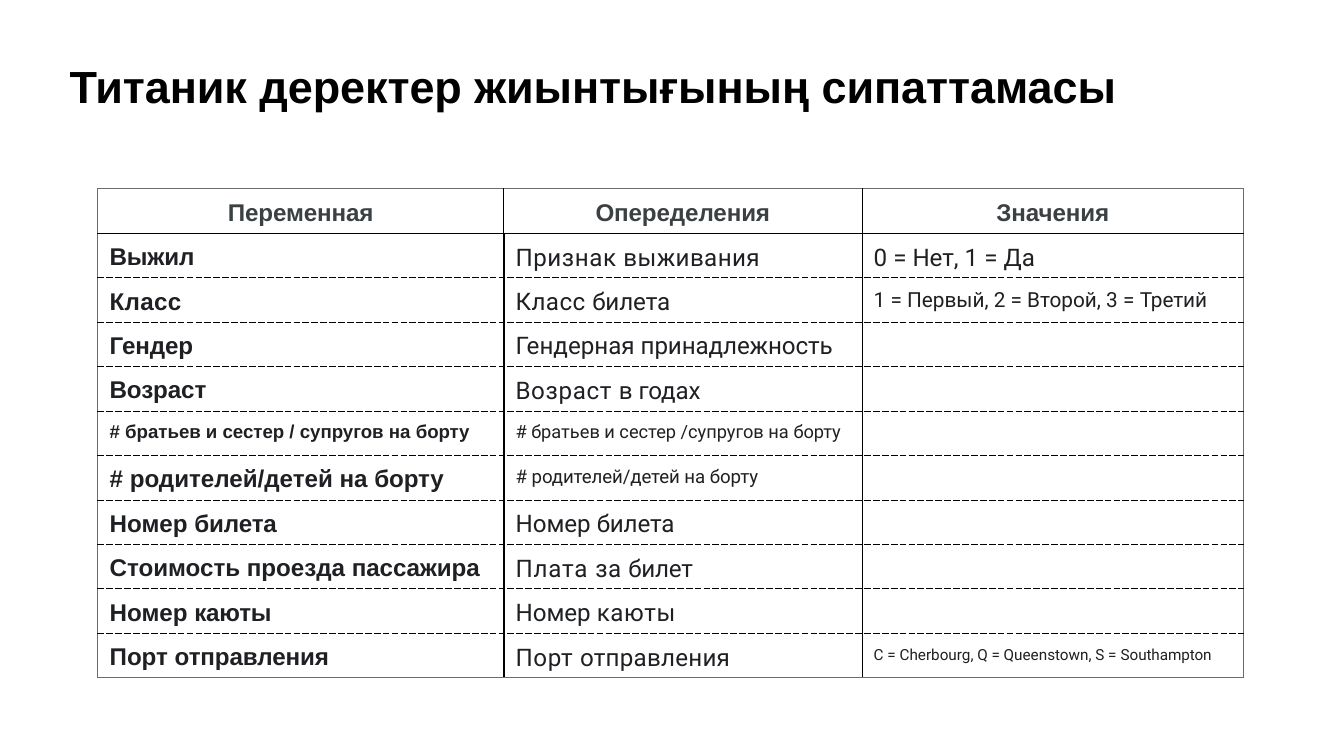
from dataclasses import dataclass

from lxml import etree
from pptx import Presentation
from pptx import util as u
from pptx.dml.color import RGBColor
from pptx.enum import text as t
from pptx.oxml import ns

WIDE, HIGH = u.Inches(21.99), u.Inches(12.37)
BLACK = RGBColor(0x00, 0x00, 0x00)
GREY = RGBColor(0x6C, 0x6C, 0x6C)
SLATE = RGBColor(0x3B, 0x40, 0x43)
INK = RGBColor(0x1F, 0x20, 0x23)
COLS = (30.2, 26.65, 28.42)
ROW = 5.88
FACES = ("Arial", "Roboto", "Roboto")


@dataclass(frozen=True)
class Span:
    text: str
    space: float = 0


@dataclass(frozen=True)
class Entry:
    spans: tuple[Span, ...]
    size: float = 28.5
    gap: float = 12.3


@dataclass(frozen=True)
class Edge:
    side: str
    tint: RGBColor
    width: float = 1
    dash: str = "solid"


def across(share: float) -> int:
    return round(WIDE * share / 100)


def down(share: float) -> int:
    return round(HIGH * share / 100)


def pair(first: str, last: str, wide: float = 0, end: float = -0.1, **look: float) -> Entry:
    return Entry((Span(first, wide), Span(last, end)), **look)


def lone(word: str, space: float = -0.1) -> Entry:
    return Entry((Span(word, space),))


HEAD = [lone(word) for word in ("Переменная", "Опеределения", "Значения")]
BODY = [
    [lone("Выжил"), pair("Признак ", "выживания", 0.7, 0.5),
     pair("0 = Нет, 1 = ", "Да", 0, 0.2)],
    [lone("Класс", 0.4), pair("Класс ", "билета", 0.6),
     pair("1 = Первый, 2 = Второй, 3 = ", "Третий", size=24.5)],
    [lone("Гендер"), pair("Гендерная ", "принадлежность")],
    [lone("Возраст"),
     Entry((Span("Возраст ", 0.8), Span("в "), Span("годах", -0.2)))],
    [pair("# братьев и сестер / супругов на ", "борту", size=22),
     pair("# братьев и сестер /супругов на ", "борту", size=21.5)],
    [pair("# родителей/детей на ", "борту"),
     Entry((Span("# "), Span("родителей/детей ", -0.1), Span("на "),
            Span("борту", -0.1)), size=22)],
    [pair("Номер ", "билета"), pair("Номер ", "билета")],
    [pair("Стоимость проезда ", "пассажира"),
     Entry((Span("Плата ", 1), Span("за ", 0.7), Span("билет", -0.2)))],
    [pair("Номер ", "каюты", 0, -0.2), pair("Номер ", "каюты", 0, 0.7)],
    [pair("Порт ", "отправления"), pair("Порт ", "отправления", 0.8, 0.3),
     pair("C = Cherbourg, Q = Queenstown, S = ", "Southampton", size=18, gap=14.9)],
]


def write(para, entry: Entry, face: str, tint: RGBColor, bold: bool, indent: float) -> None:
    para.space_before = u.Pt(entry.gap)
    props = para._p.get_or_add_pPr()
    props.set("marL", str(across(indent)))
    props.set("indent", "0")
    font = para.font
    font.name, font.size, font.bold = face, u.Pt(entry.size), bold
    font.color.rgb = tint
    for span in entry.spans:
        run = para.add_run()
        run.text = span.text
        run._r.get_or_add_rPr().set("spc", str(round(span.space * 100)))


def rule(cell, edge: Edge) -> None:
    line = etree.SubElement(cell._tc.get_or_add_tcPr(), ns.qn(f"a:ln{edge.side}"),
                            w=str(u.Pt(edge.width)))
    fill = etree.SubElement(line, ns.qn("a:solidFill"))
    etree.SubElement(fill, ns.qn("a:srgbClr"), val=str(edge.tint))
    etree.SubElement(line, ns.qn("a:prstDash"), val=edge.dash)


def upright(side: str, row: int, mark: int) -> Edge:
    if mark in (0, len(COLS)):
        return Edge(side, GREY)
    return Edge(side, BLACK, 2.25 if mark == 1 and row else 1)


def level(side: str, mark: int) -> Edge:
    if mark in (0, len(BODY) + 1):
        return Edge(side, GREY)
    return Edge(side, BLACK, dash="solid" if mark == 1 else "sysDash")


def frame(cell, row: int, col: int) -> None:
    for edge in (upright("L", row, col), upright("R", row, col + 1),
                 level("T", row), level("B", row + 1)):
        rule(cell, edge)
    cell.fill.background()


def put(cell, entry: Entry, row: int, col: int) -> None:
    cell.margin_left = cell.margin_right = cell.margin_bottom = 0
    cell.margin_top = u.Pt(entry.gap)
    para = cell.text_frame.paragraphs[0]
    if row:
        write(para, entry, FACES[col], INK, col == 0, 0.88)
    else:
        para.alignment = t.PP_ALIGN.CENTER
        write(para, entry, "Arial", SLATE, True, 0)


def add_title(slide) -> None:
    title = slide.shapes.title
    title.left, title.top = across(5.09), down(7.68)
    title.width, title.height = across(89.81), down(7.36)
    box = title.text_frame
    box.margin_left = box.margin_right = box.margin_bottom = 0
    box.margin_top = u.Pt(1)
    box.word_wrap = True
    box.auto_size = t.MSO_AUTO_SIZE.SHAPE_TO_FIT_TEXT
    box.vertical_anchor = t.MSO_ANCHOR.TOP
    para = box.paragraphs[0]
    para.alignment = t.PP_ALIGN.LEFT
    entry = Entry((Span("Титаник деректер жиынтығының сипаттамасы", -0.1),), 53, 1)
    write(para, entry, "Arial", BLACK, True, 0.09)


def add_grid(slide) -> None:
    rows = [HEAD, *BODY]
    grid = slide.shapes.add_table(len(rows), len(COLS), across(7.28), down(24.98),
                                  across(sum(COLS)), down(ROW * len(rows))).table
    grid.first_row = grid.horz_banding = False
    for col, share in zip(grid.columns, COLS):
        col.width = across(share)
    for row, items in enumerate(rows):
        grid.rows[row].height = down(ROW)
        for col in range(len(COLS)):
            frame(grid.cell(row, col), row, col)
        for col, entry in enumerate(items):
            put(grid.cell(row, col), entry, row, col)


def main() -> None:
    deck = Presentation()
    deck.slide_width, deck.slide_height = WIDE, HIGH
    slide = deck.slides.add_slide(deck.slide_layouts[5])
    add_title(slide)
    add_grid(slide)
    deck.save("out.pptx")


if __name__ == "__main__":
    main()
